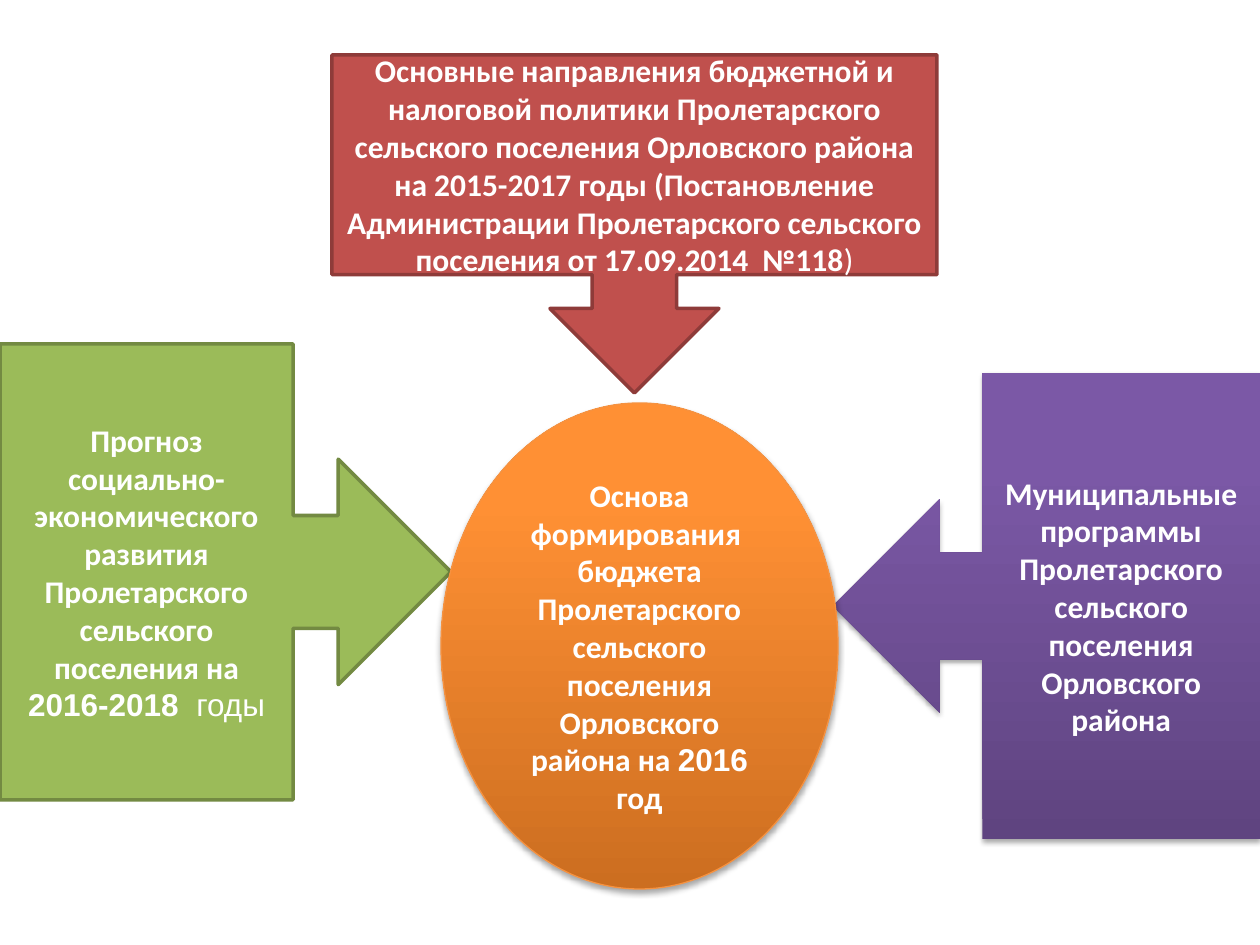
from lxml.etree import SubElement
from pptx import Presentation
from pptx.dml.color import RGBColor
from pptx.enum.shapes import MSO_SHAPE as Kind
from pptx.enum.text import MSO_ANCHOR as Anchor, PP_ALIGN as Align
from pptx.oxml.ns import qn
from pptx.util import Emu, Pt

SCALE = 914400 // 126
HEX = {
    "white": "FFFFFF", "black": "000000",
    "red": "C0504D", "maroon": "8E3B39",
    "green": "9BBB59", "olive": "738A42",
    "amber": "F69240",
}
# Gradient stops from bottom to top: percent and colour
VIOLET = [(0, "5F4480"), (80, "7B58A6"), (100, "7C57A8")]
ORANGE = [(0, "CC6E20"), (80, "FF9034"), (100, "FF9136")]


def px(num):
    return Emu(num * SCALE)


def rgb(name):
    return RGBColor.from_string(HEX[name])


class Page:
    font, size = "Calibri", Pt(18)

    def __init__(self, deck):
        self.slide = deck.slides.add_slide(deck.slide_layouts[6])

    def block(self, kind, box, runs, line=None, width=2):
        """Add a shape with centred text; each run is (text, font, bold)."""
        shape = self.slide.shapes.add_shape(kind, *map(px, box))
        shape.shadow.inherit = False
        if line:
            shape.line.color.rgb = rgb(line)
            shape.line.width = Pt(width)
        else:
            shape.line.fill.background()
        frame = shape.text_frame
        frame.word_wrap = True
        frame.vertical_anchor = Anchor.MIDDLE
        para = frame.paragraphs[0]
        para.alignment = Align.CENTER
        para.font.size = self.size
        para.font.color.rgb = rgb("white")
        for text, font, bold in runs:
            run = para.add_run()
            run.text = text
            run.font.name, run.font.bold = font, bold
        return shape

    def flat(self, shape, name):
        shape.fill.solid()
        shape.fill.fore_color.rgb = rgb(name)

    def glow(self, shape, stops):
        """Fill with an upward gradient and cast a soft shadow below."""
        shape.fill.gradient()
        shape.fill.gradient_angle = 90
        props = shape._element.spPr
        group = props.find(".//" + qn("a:gsLst"))
        for old in list(group):
            group.remove(old)
        for pos, tone in stops:
            stop = SubElement(group, qn("a:gs"), pos=str(pos * 1000))
            SubElement(stop, qn("a:srgbClr"), val=tone)
        shade = SubElement(props.find(qn("a:effectLst")), qn("a:outerShdw"),
                           blurRad=str(Pt(3.1)), dist=str(Pt(1.8)),
                           dir="5400000", rotWithShape="0")
        tint = SubElement(shade, qn("a:srgbClr"), val=HEX["black"])
        SubElement(tint, qn("a:alpha"), val="35000")


def main():
    deck = Presentation()
    deck.slide_width, deck.slide_height = px(1260), px(945)
    page = Page(deck)
    font = page.font

    policy = page.block(Kind.DOWN_ARROW_CALLOUT, (332, 55, 605, 338), [
        ("Основные направления бюджетной и налоговой политики Пролетарского "
         "сельского поселения Орловского района на 2015-2017 годы "
         "(Постановление Администрации Пролетарского сельского поселения "
         "от 17.09.2014  №118", font, True),
        (")", font, False)], "maroon")
    page.flat(policy, "red")

    outlook = page.block(Kind.RIGHT_ARROW_CALLOUT, (0, 344, 451, 456), [
        ("Прогноз социально-экономического развития Пролетарского "
         "сельского поселения на ", font, True),
        ("2016-2018  ", "Arial", True),
        ("годы", "Arial", False)], "olive")
    page.flat(outlook, "green")

    plans = page.block(Kind.LEFT_ARROW_CALLOUT, (833, 373, 427, 466), [
        ("Муниципальные программы Пролетарского сельского поселения "
         "Орловского района", font, True)])
    page.glow(plans, VIOLET)

    budget = page.block(Kind.OVAL, (441, 403, 397, 486), [
        ("Основа формирования  бюджета Пролетарского сельского поселения "
         "Орловского района на ", font, True),
        ("2016", "Arial", True),
        (" год", font, True)], "amber", 0.75)
    page.glow(budget, ORANGE)

    deck.save("out.pptx")


if __name__ == "__main__":
    main()
